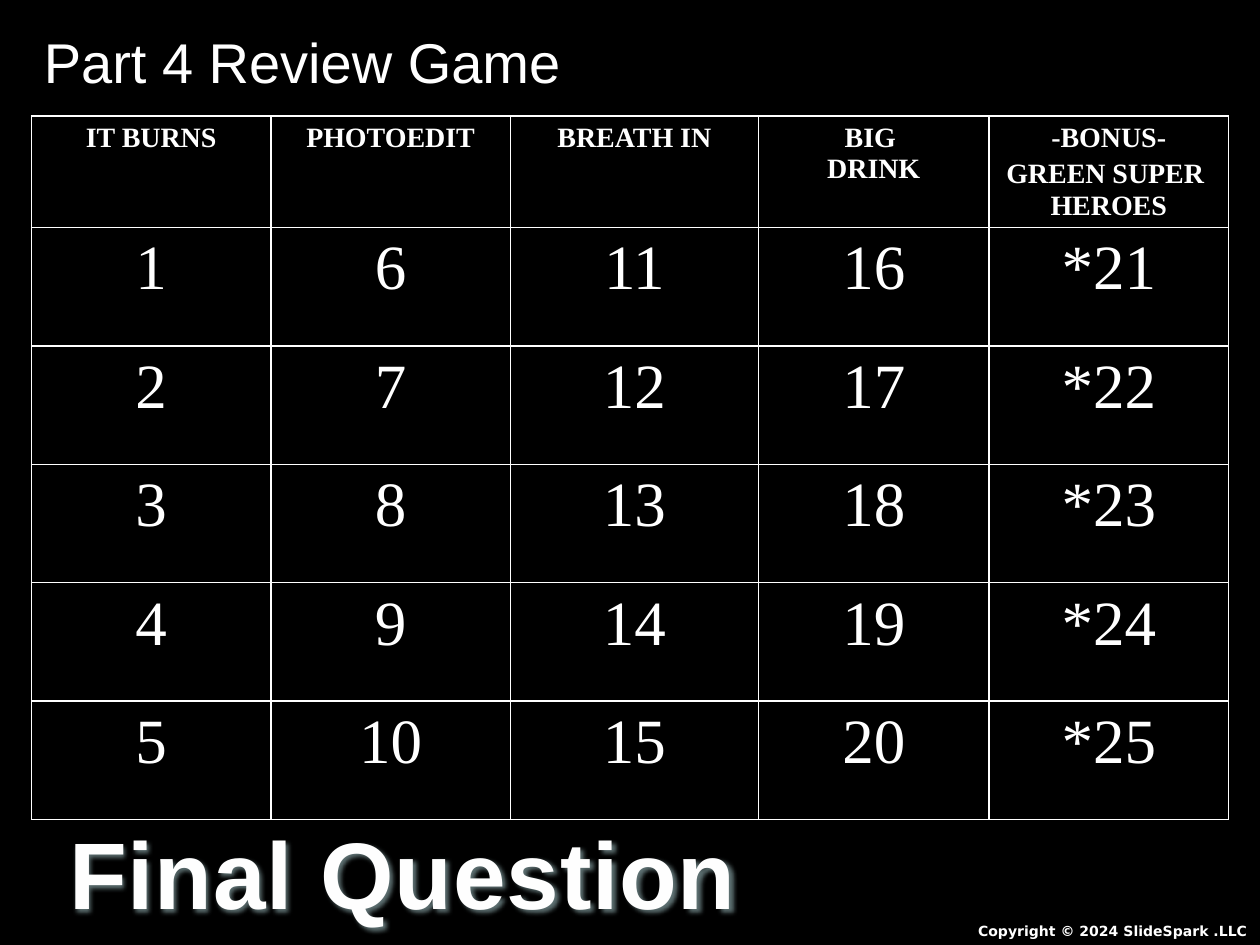
import pptx
import pptx.dml.color
import pptx.enum.text
import pptx.oxml
import pptx.oxml.ns
import pptx.util
from pptx.util import Inches

COLORS = {"background": "000000", "text": "FFFFFF", "banner": "FEFEFE", "outline": "BBE0E3"}
ALIGN = pptx.enum.text.PP_ALIGN
HEADINGS = ["IT BURNS", "PHOTOEDIT", "BREATH IN", "BIG \vDRINK",
            "-BONUS-\nGREEN SUPER \vHEROES"]
COLUMN_WIDTHS = [1.9, 1.9, 1.97, 1.83, 1.9]
HEADING_HEIGHT = 0.87
QUESTION_HEIGHT = 0.94
QUESTIONS = 5


def rgb(name):
    return pptx.dml.color.RGBColor.from_string(COLORS[name])


def xml_element(tag, attributes, content):
    namespace = pptx.oxml.ns.nsdecls("a")
    return pptx.oxml.parse_xml(f"<a:{tag} {namespace} {attributes}>{content}</a:{tag}>")


def solid_fill(name):
    return f'<a:solidFill><a:srgbClr val="{COLORS[name]}"/></a:solidFill>'


def style_text(frame, font, size, bold=False, align=ALIGN.LEFT, color="text"):
    for paragraph in frame.paragraphs:
        paragraph.alignment = align
        for span in paragraph.runs:
            span.font.name = font
            span.font.size = pptx.util.Pt(size)
            span.font.bold = bold
            span.font.color.rgb = rgb(color)


def add_text(page, text, left, top, width, height, wrap=True, **style):
    box = page.shapes.add_textbox(Inches(left), Inches(top), Inches(width), Inches(height))
    frame = box.text_frame
    frame.word_wrap = wrap
    frame.auto_size = pptx.enum.text.MSO_AUTO_SIZE.SHAPE_TO_FIT_TEXT
    frame.text = text
    style_text(frame, **style)
    return box


def add_banner_effects(box):
    properties = box.text_frame.paragraphs[0].runs[0].font._element
    properties.set("spc", "50")
    outline_width = pptx.util.Pt(0.75)
    properties.insert(0, xml_element("ln", f'w="{outline_width}"', solid_fill("outline")))
    shadow = (f'<a:outerShdw blurRad="{Inches(0.03)}" dist="{Inches(0.02)}" dir="2700000">'
              f'<a:srgbClr val="{COLORS["outline"]}"><a:alpha val="50000"/></a:srgbClr>'
              '</a:outerShdw>')
    box._element.spPr.append(xml_element("effectLst", "", shadow))


def add_borders(cell):
    properties = cell._tc.get_or_add_tcPr()
    for index, tag in enumerate(["lnL", "lnR", "lnT", "lnB"]):
        line = xml_element(tag, f'w="{pptx.util.Pt(1)}"', solid_fill("text"))
        properties.insert(index, line)


def fill_cell(cell, text, size, bold):
    cell.text = text
    cell.fill.background()
    add_borders(cell)
    style_text(cell.text_frame, "Times New Roman", size, bold, ALIGN.CENTER)
    for paragraph in cell.text_frame.paragraphs[1:]:
        paragraph.space_before = pptx.util.Pt(0.2 * size)


def add_board(page):
    height = HEADING_HEIGHT + QUESTIONS * QUESTION_HEIGHT
    table = page.shapes.add_table(
        QUESTIONS + 1, len(HEADINGS), Inches(0.25), Inches(0.92),
        Inches(sum(COLUMN_WIDTHS)), Inches(height)).table
    table.first_row = False
    table.horz_banding = False
    for row in table.rows:
        row.height = Inches(QUESTION_HEIGHT)
    table.rows[0].height = Inches(HEADING_HEIGHT)
    for column, (heading, width) in enumerate(zip(HEADINGS, COLUMN_WIDTHS)):
        table.columns[column].width = Inches(width)
        fill_cell(table.cell(0, column), heading, 16, True)
        prefix = "*" if "BONUS" in heading else ""
        for row in range(1, QUESTIONS + 1):
            number = column * QUESTIONS + row
            fill_cell(table.cell(row, column), f"{prefix}{number}", 36, False)


def main():
    deck = pptx.Presentation()
    deck.slide_width = Inches(10)
    deck.slide_height = Inches(7.5)
    page = deck.slides.add_slide(deck.slide_layouts[6])
    page.background.fill.solid()
    page.background.fill.fore_color.rgb = rgb("background")
    add_board(page)
    add_text(page, "Copyright © 2024 SlideSpark .LLC", 7.08, 7.27, 2.92, 0.23,
             font="DejaVu Sans", size=8, bold=True, align=ALIGN.RIGHT)
    add_text(page, "Part 4 Review Game", 0.25, 0.17, 9.75, 0.63, font="Arial", size=32)
    banner = add_text(page, "Final Question", 0.42, 6.42, 5.56, 1.01, wrap=False,
                      font="Arial", size=54, bold=True, align=ALIGN.CENTER, color="banner")
    add_banner_effects(banner)
    deck.save("out.pptx")


if __name__ == "__main__":
    main()
